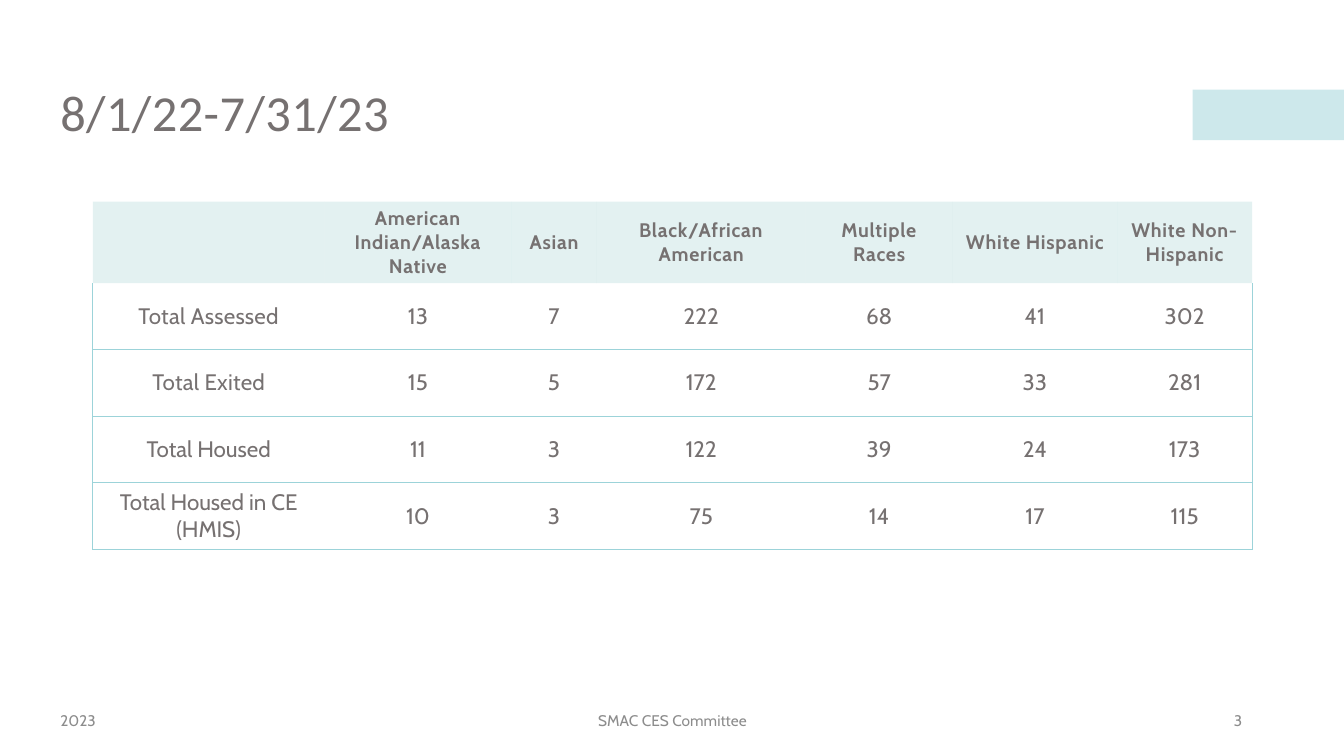
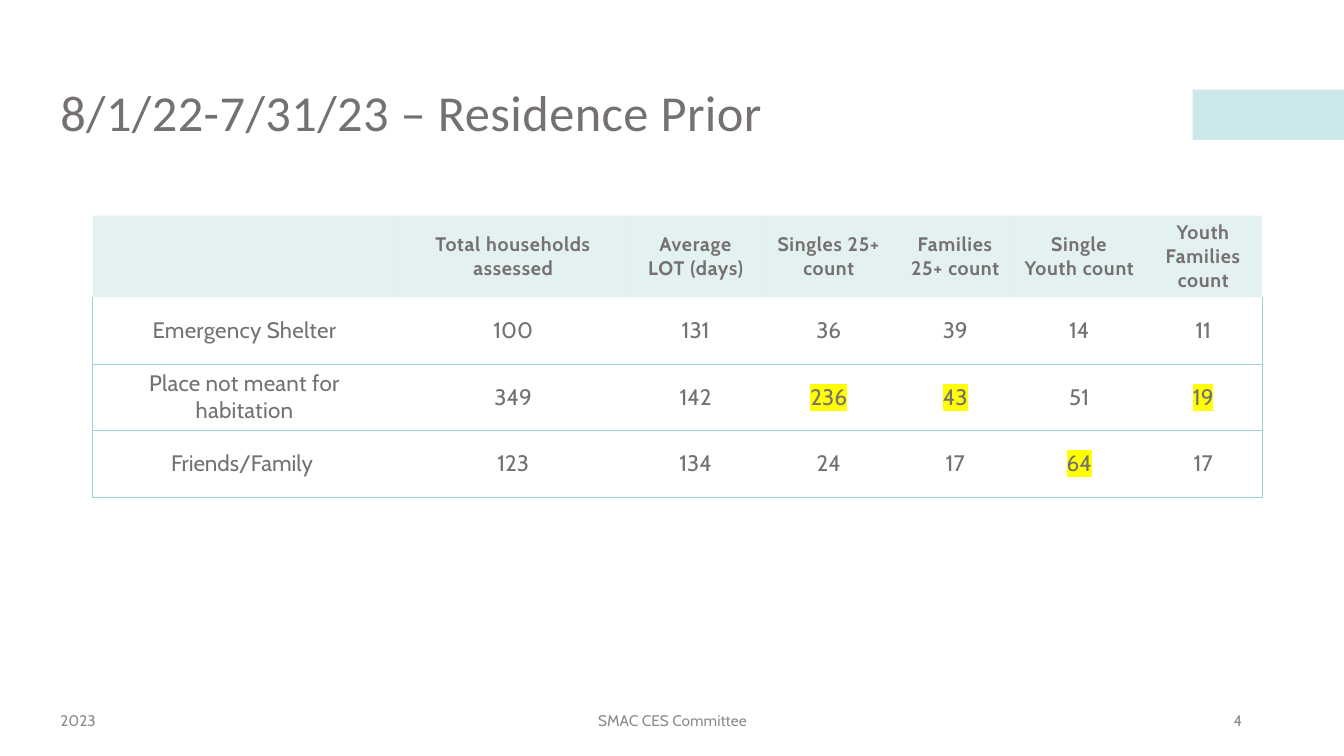
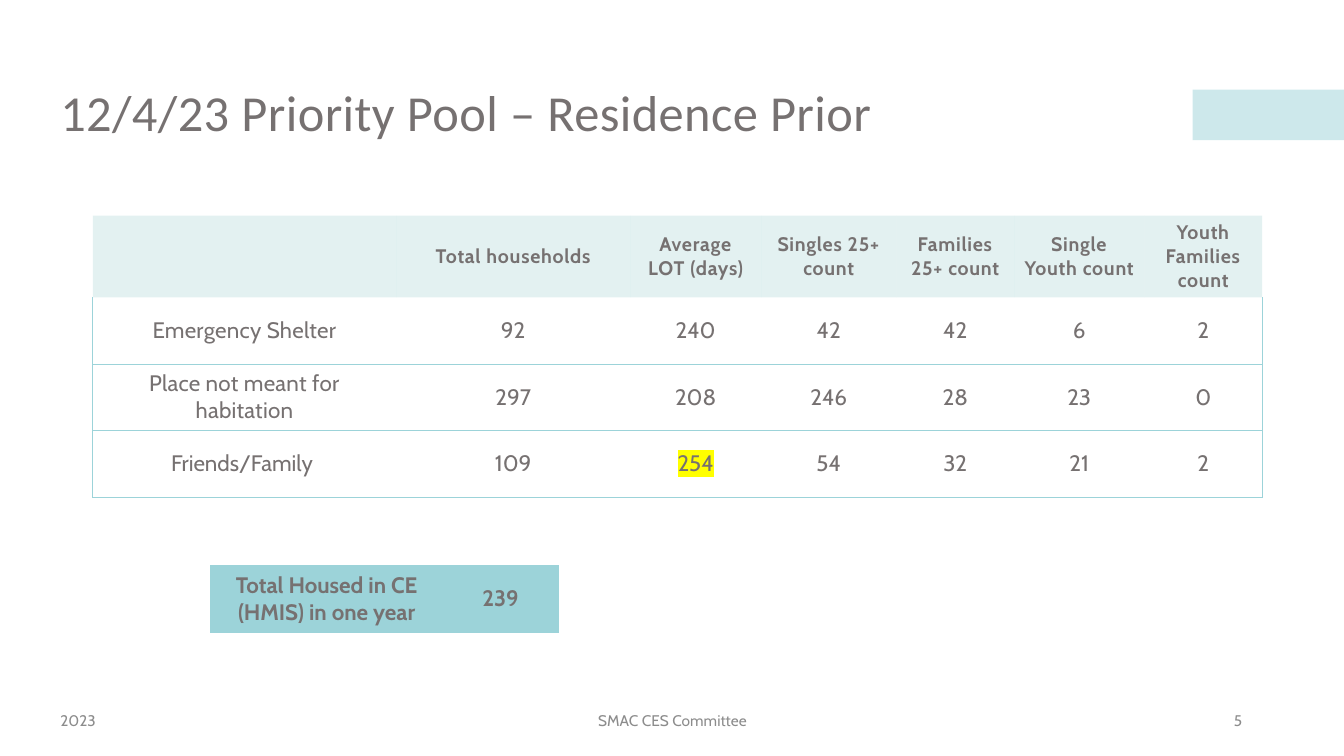
from dataclasses import dataclass

from lxml import etree
from pptx import Presentation
from pptx.dml.color import RGBColor
from pptx.enum import shapes, text
from pptx.oxml.ns import qn
from pptx.util import Inches, Pt


@dataclass(frozen=True)
class Theme:
    title_font: str = "Calibri"
    body_font: str = "Cabin"
    ink: str = "767171"
    footer_ink: str = "8C8C8C"
    teal: str = "9CD3D9"
    header_fill: str = "76BCBC"
    highlight: str = "FFFF00"
    title_size: int = 36
    body_size: int = 16
    header_size: int = 14
    footer_size: int = 11
    border: float = 0.5


theme = Theme()
LEFT, CENTER, RIGHT = text.PP_ALIGN.LEFT, text.PP_ALIGN.CENTER, text.PP_ALIGN.RIGHT


def write_text(frame, content, *, size=theme.body_size, font=theme.body_font,
               color=theme.ink, bold=False, spacing=0, align=CENTER,
               line_spacing=None, highlight=None):
    """Put one formatted run in a text frame; spacing is in points."""
    frame.word_wrap = True
    paragraph = frame.paragraphs[0]
    paragraph.alignment = align
    paragraph.line_spacing = line_spacing
    run = paragraph.add_run()
    run.text = str(content)
    run.font.size = Pt(size)
    run.font.name = font
    run.font.bold = bold
    run.font.color.rgb = RGBColor.from_string(color)
    properties = run.font._element
    properties.set("spc", str(round(spacing * 100)))
    if highlight:
        marker = etree.Element(qn("a:highlight"))
        etree.SubElement(marker, qn("a:srgbClr"), val=highlight)
        properties.find(qn("a:solidFill")).addnext(marker)


def fill_solid(fill, properties, color, opacity):
    """Fill with a colour at an opacity in percent."""
    fill.solid()
    fill.fore_color.rgb = RGBColor.from_string(color)
    color_element = properties.find(qn("a:solidFill"))[0]
    etree.SubElement(color_element, qn("a:alpha"), val=str(opacity * 1000))


header_style = dict(size=theme.header_size, bold=True, spacing=0.5)
header_look = dict(style=header_style, color=theme.header_fill, opacity=20,
                   height=0.81, bordered=False)
total_look = dict(style=dict(bold=True), color=theme.teal, opacity=100,
                  height=0.66, bordered=True)
body_height = 0.66

residence_columns = [3.01, 2.32, 1.3, 1.34, 1.17, 1.29, 1.17]
residence_counts = ["Average LOT (days)", "Singles 25+ count", "Families 25+ count",
                    "Single Youth count", "Youth Families count"]

# Marked cells are (row, column), with the header as row 0.
slides = [
    ("8/1/22-7/31/23", [
        dict(left=0.92, top=2, columns=[2.3, 1.85, 0.85, 2.07, 1.46, 1.63, 1.34],
             look=header_look, marked=set(), rows=[
                 ["", "American Indian/Alaska Native", "Asian", "Black/African American",
                  "Multiple Races", "White Hispanic", "White Non-Hispanic"],
                 ["Total Assessed", 13, 7, 222, 68, 41, 302],
                 ["Total Exited", 15, 5, 172, 57, 33, 281],
                 ["Total Housed", 11, 3, 122, 39, 24, 173],
                 ["Total Housed in CE (HMIS)", 10, 3, 75, 14, 17, 115]]),
    ]),
    ("8/1/22-7/31/23 – Residence Prior", [
        dict(left=0.92, top=2.14, columns=residence_columns, look=header_look,
             marked={(2, 3), (2, 4), (2, 6), (3, 5)}, rows=[
                 ["", "Total households assessed", *residence_counts],
                 ["Emergency Shelter", 100, 131, 36, 39, 14, 11],
                 ["Place not meant for habitation", 349, 142, 236, 43, 51, 19],
                 ["Friends/Family ", 123, 134, 24, 17, 64, 17]]),
    ]),
    ("12/4/23 Priority Pool – Residence Prior", [
        dict(left=0.92, top=2.14, columns=residence_columns, look=header_look,
             marked={(3, 2)}, rows=[
                 ["", "Total households", *residence_counts],
                 ["Emergency Shelter", 92, 240, 42, 42, 6, 2],
                 ["Place not meant for habitation", 297, 208, 246, 28, 23, 0],
                 ["Friends/Family ", 109, 254, 54, 32, 21, 2]]),
        dict(left=2.09, top=5.61, columns=[2.3, 1.15], look=total_look, marked=set(),
             rows=[["Total Housed in CE (HMIS) in one year", 239]]),
    ]),
]

presentation = Presentation()
presentation.slide_width = Inches(13.33)
presentation.slide_height = Inches(7.5)
blank_layout = presentation.slide_layouts[6]

for number, (title, tables) in enumerate(slides, start=3):
    slide = presentation.slides.add_slide(blank_layout)

    band = slide.shapes.add_shape(shapes.MSO_SHAPE.RECTANGLE, Inches(11.83), Inches(0.89),
                                  Inches(1.5), Inches(0.5))
    band.shadow.inherit = False
    band.line.fill.background()
    fill_solid(band.fill, band._element.spPr, theme.teal, 50)

    footer = dict(size=theme.footer_size, color=theme.footer_ink)
    for content, left, top, width, height, style in [
        (title, 0.5, 0.42, 12.33, 1.45,
         dict(size=theme.title_size, font=theme.title_font, spacing=0.3,
              align=LEFT, line_spacing=0.9)),
        ("2023", 0.5, 6.95, 3, 0.4, dict(footer, align=LEFT)),
        ("SMAC CES Committee", 4.42, 6.95, 4.5, 0.4, footer),
        (number, 9.42, 6.95, 3, 0.4, dict(footer, align=RIGHT)),
    ]:
        box = slide.shapes.add_textbox(Inches(left), Inches(top), Inches(width), Inches(height))
        box.text_frame.vertical_anchor = text.MSO_ANCHOR.MIDDLE
        write_text(box.text_frame, content, **style)

    for block in tables:
        rows, columns, look = block["rows"], block["columns"], block["look"]
        heights = [look["height"]] + [body_height] * (len(rows) - 1)
        table = slide.shapes.add_table(
            len(rows), len(columns), Inches(block["left"]), Inches(block["top"]),
            Inches(sum(columns)), Inches(sum(heights))).table
        table.first_row = table.horz_banding = False
        for column, width in zip(table.columns, columns):
            column.width = Inches(width)

        for r, (row, height) in enumerate(zip(rows, heights)):
            table.rows[r].height = Inches(height)
            for c, content in enumerate(row):
                cell = table.cell(r, c)
                cell.vertical_anchor = text.MSO_ANCHOR.MIDDLE
                properties = cell._tc.get_or_add_tcPr()
                bordered = r > 0 or look["bordered"]
                sides = {"L": bordered and c == 0,
                         "R": bordered and c == len(row) - 1,
                         "T": bordered and r != 1,
                         "B": bordered}
                for side, visible in sides.items():
                    line = etree.SubElement(properties, qn(f"a:ln{side}"),
                                            w=str(Pt(theme.border)))
                    paint = etree.SubElement(line, qn("a:solidFill" if visible else "a:noFill"))
                    if visible:
                        etree.SubElement(paint, qn("a:srgbClr"), val=theme.teal)

                if r == 0:
                    fill_solid(cell.fill, properties, look["color"], look["opacity"])
                    style = look["style"]
                else:
                    cell.fill.background()
                    style = dict(spacing=0.2 if c == 0 and r < 3 else 0,
                                 highlight=theme.highlight if (r, c) in block["marked"] else None)
                if content != "":
                    write_text(cell.text_frame, content, **style)

presentation.save("out.pptx")
